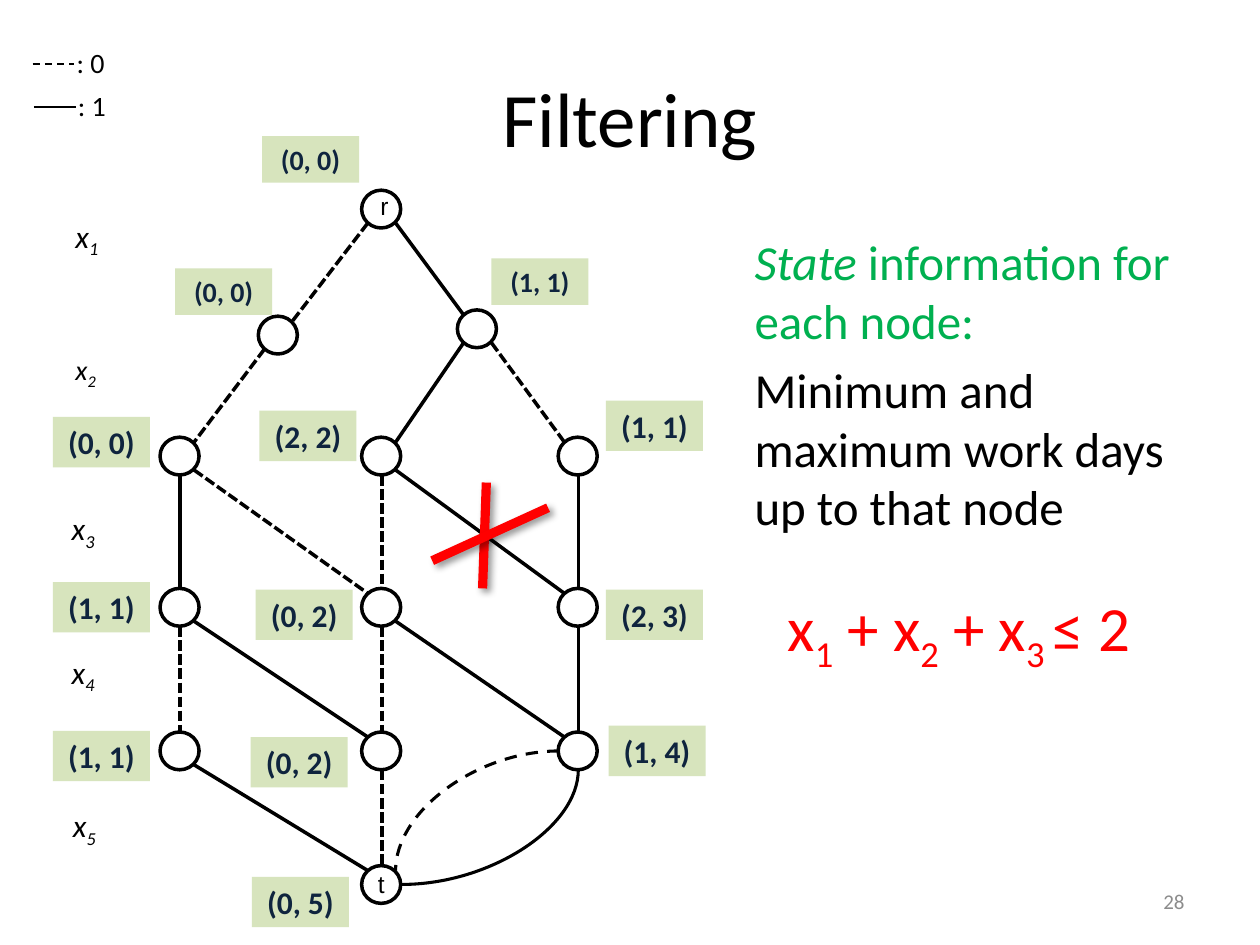
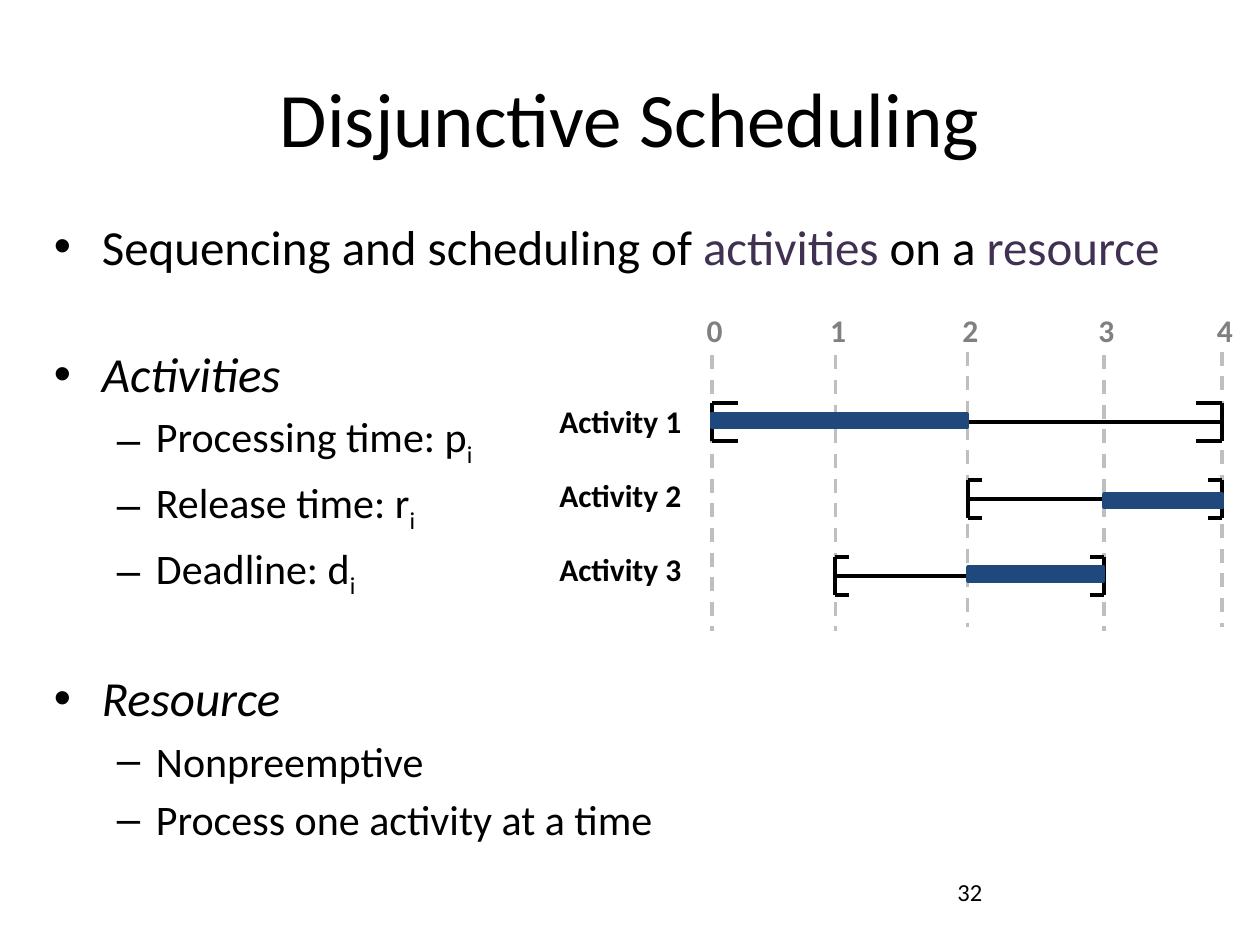
from lxml import etree
from pptx import Presentation, util as u
from pptx.dml.color import RGBColor
from pptx.enum import dml, shapes, text
from pptx.oxml import parse_xml
from pptx.oxml.ns import nsdecls, qn

BLACK, WHITE, RED, GREEN = "000000", "FFFFFF", "FF0000", "00B050"
NAVY, PURPLE, TAG_GREEN, TAG_TEXT = "1F497D", "403152", "D7E4BD", "0F243E"
TICK_GRAY, TICK_TEXT, NUMBER_GRAY = "BFBFBF", "808080", "8C8C8C"
SHORT_DASH, DASH = dml.MSO_LINE.SQUARE_DOT, dml.MSO_LINE.DASH
LEFT, CENTER, RIGHT = text.PP_ALIGN.LEFT, text.PP_ALIGN.CENTER, text.PP_ALIGN.RIGHT
TOP, MIDDLE = text.MSO_ANCHOR.TOP, text.MSO_ANCHOR.MIDDLE
color = RGBColor.from_string


def add_text(slide, box, paragraphs, size, hue=BLACK, bold=False, font="Calibri",
             align=LEFT, anchor=TOP, wrap=True, fill=None, space=0):
    """Each paragraph is a list of (text, style) runs; style may hold i, sub, hue."""
    box = [u.Inches(length) for length in box]
    if fill:
        shape = slide.shapes.add_shape(shapes.MSO_SHAPE.RECTANGLE, *box)
        shape.shadow.inherit = False
        shape.fill.solid()
        shape.fill.fore_color.rgb = color(fill)
        shape.line.fill.background()
    else:
        shape = slide.shapes.add_textbox(*box)
    frame = shape.text_frame
    frame.word_wrap, frame.vertical_anchor = wrap, anchor
    for index, runs in enumerate(paragraphs):
        paragraph = frame.add_paragraph() if index else frame.paragraphs[0]
        paragraph.alignment = align
        paragraph.space_before = u.Pt(space)
        for words, style in runs:
            run = paragraph.add_run()
            run.text = words
            run.font.name, run.font.size, run.font.bold = font, u.Pt(size), bold
            run.font.italic = "i" in style
            run.font.color.rgb = color(style.get("hue", hue))
            if "sub" in style:
                run._r.get_or_add_rPr().set("baseline", "-25000")
    return frame


def add_line(slide, start, end, width, hue=BLACK, dash=None, curved=False, shadow=False):
    kind = shapes.MSO_CONNECTOR.CURVE if curved else shapes.MSO_CONNECTOR.STRAIGHT
    line = slide.shapes.add_connector(kind, *[u.Inches(v) for v in (*start, *end)])
    line.line.width = u.Pt(width)
    line.line.color.rgb = color(hue)
    if dash:
        line.line.dash_style = dash
    properties = line._element.spPr
    if curved:  # a quarter turn that leaves the start horizontally
        properties.find(qn("a:prstGeom")).set("prst", "curvedConnector2")
    effects = etree.SubElement(properties, qn("a:effectLst"))
    if shadow:
        effects.append(parse_xml(
            f'<a:outerShdw {nsdecls("a")} blurRad="50800" dist="38100" dir="2700000">'
            '<a:srgbClr val="000000"><a:alpha val="40000"/></a:srgbClr></a:outerShdw>'))


presentation = Presentation()
presentation.slide_width, presentation.slide_height = u.Inches(10), u.Inches(7.5)

slides = []
for title in ("Filtering", "Disjunctive Scheduling"):
    slide = presentation.slides.add_slide(presentation.slide_layouts[6])
    add_text(slide, (0.5, 0.3, 9, 1.25), [[(title, {})]], 44, align=CENTER, anchor=MIDDLE)
    slides.append(slide)
filtering, scheduling = slides

# Filtering: decision diagram
COLUMNS = {"left": 1.43, "middle": 3.03, "right": 4.59}
nodes = {"r": (3.03, 1.66), "x2 zero": (2.21, 2.66), "x2 one": (3.79, 2.61), "t": (3.03, 7.02)}
for row, y in ((3, 3.62), (4, 4.82), (5, 5.96)):
    for column, x in COLUMNS.items():
        nodes[f"{column} {row}"] = (x, y)

zero_edges = [("r", "x2 zero"), ("x2 zero", "left 3"), ("x2 one", "right 3"),
              ("left 3", "middle 4"), ("middle 3", "middle 4"), ("left 4", "left 5"),
              ("middle 4", "middle 5"), ("middle 5", "t")]
one_edges = [("r", "x2 one"), ("x2 one", "middle 3"), ("left 3", "left 4"),
             ("middle 3", "right 4"), ("right 3", "right 4"), ("left 4", "middle 5"),
             ("middle 4", "right 5"), ("right 4", "right 5"), ("left 5", "t")]
for edges, dash in ((zero_edges, SHORT_DASH), (one_edges, None)):
    for upper, lower in edges:
        (x1, y1), (x2, y2) = nodes[upper], nodes[lower]
        side = (x2 > x1) - (x2 < x1)
        dx, dy = 0.11 * side, 0.11 if side else 0.15
        add_line(filtering, (x1 + dx, y1 + dy), (x2 - dx, y2 - dy), 2, dash=dash)

for x, y in nodes.values():
    node = filtering.shapes.add_shape(
        shapes.MSO_SHAPE.OVAL, u.Inches(x - 0.16), u.Inches(y - 0.15),
        u.Inches(0.31), u.Inches(0.3))
    node.shadow.inherit = False
    node.fill.solid()
    node.fill.fore_color.rgb = color(WHITE)
    node.line.color.rgb = color(BLACK)
    node.line.width = u.Pt(2)

add_line(filtering, (3.19, 7.02), (4.59, 6.11), 1.75, curved=True)
add_line(filtering, (4.44, 5.96), (3.14, 6.91), 1.75, dash=DASH, curved=True)

variables = [(0.5, 1.67, 18), (0.5, 2.75, 16), (0.47, 3.99, 18), (0.47, 5.13, 18), (0.48, 6.35, 18)]
for index, (x, y, size) in enumerate(variables, 1):
    add_text(filtering, (x, y, 0.52, 0.4),
             [[("x", {"i": 1}), (str(index), {"i": 1, "sub": 1})]], size)

add_text(filtering, (5.89, 1.79, 3.86, 3.18), [
    [("State", {"i": 1, "hue": GREEN}), (" information for each node:", {"hue": GREEN})],
    [("Minimum and maximum work days up to that node", {})]], 28, space=5.6)
constraint = add_text(filtering, (6.25, 4.67, 2.91, 0.61), [[
    ("x", {}), ("1", {"sub": 1}), (" + x", {}), ("2", {"sub": 1}),
    (" + x", {}), ("3 ", {"sub": 1}), ("≤ 2", {})]], 36, RED, wrap=False, space=7.2)
constraint.margin_left = constraint.margin_right = 0
constraint.margin_top = constraint.margin_bottom = 0

for start, end in (((3.86, 3.83), (3.83, 4.67)), ((4.35, 4.03), (3.43, 4.45))):
    add_line(filtering, start, end, 5.25, RED, shadow=True)

states = [
    (2.08, 1.08, "(0, 0)", 16), (1.39, 2.13, "(0, 0)", 16), (3.9, 2.05, "(1, 1)", 16),
    (0.42, 3.31, "(0, 0)", 18), (0.42, 4.62, "(1, 1)", 18), (0.42, 5.8, "(1, 1)", 18),
    (2.06, 3.26, "(2, 2)", 18), (2.03, 4.68, "(0, 2)", 18), (1.99, 5.85, "(0, 2)", 18),
    (4.81, 3.18, "(1, 1)", 18), (4.81, 4.68, "(2, 3)", 18), (4.83, 5.76, "(1, 4)", 18),
    (2, 6.96, "(0, 5)", 18)]
for x, y, state, size in states:
    add_text(filtering, (x, y, 0.77, 0.37 if size == 16 else 0.4), [[(state, {})]], size,
             TAG_TEXT, bold=True, align=CENTER, fill=TAG_GREEN)

for x, y, name in ((2.92, 1.47, "r"), (2.9, 6.85, "t")):
    add_text(filtering, (x, y, 0.44, 0.34), [[(name, {})]], 14, font="Arial")

for x, y, value, dash in ((0.26, 0.51, 0, DASH), (0.27, 0.85, 1, None)):
    add_line(filtering, (x, y), (x + 0.33, y), 1, dash=dash)
    add_text(filtering, (x + 0.25, y - 0.2, 0.43, 0.37), [[(f": {value}", {})]], 16, wrap=False)

add_text(filtering, (7.17, 6.95, 2.33, 0.4), [[("28", {})]], 12, NUMBER_GRAY,
         align=RIGHT, anchor=MIDDLE)

# Disjunctive Scheduling: outline, as (level, space before, runs)
outline = [
    (0, 5.6, [("Sequencing and scheduling of ", {}), ("activities", {"hue": PURPLE}),
              (" on a ", {}), ("resource", {"hue": PURPLE})]),
    (0, 39, [("Activities", {"i": 1})]),
    (1, 4.8, [("Processing time: p", {}), ("i", {"sub": 1})]),
    (1, 4.8, [("Release time: r", {}), ("i", {"sub": 1})]),
    (1, 4.8, [("Deadline: d", {}), ("i", {"sub": 1})]),
    (0, 39, [("Resource", {"i": 1})]),
    (1, 4.8, [("Nonpreemptive", {})]),
    (1, 4.8, [("Process one activity at a time", {})])]
LEVELS = [("•", 0.38, -0.38, 28), ("–", 0.81, -0.31, 24)]
body = add_text(scheduling, (0.33, 1.67, 9, 5.4), [runs for _, _, runs in outline], 28)
for paragraph, (level, space, _) in zip(body.paragraphs, outline):
    bullet, margin, indent, size = LEVELS[level]
    paragraph.level = level
    paragraph.space_before = u.Pt(space)
    for run in paragraph.runs:
        run.font.size = u.Pt(size)
    properties = paragraph._p.get_or_add_pPr()
    properties.set("marL", str(u.Inches(margin)))
    properties.set("indent", str(u.Inches(indent)))
    etree.SubElement(properties, qn("a:buFont")).set("typeface", "Arial")
    etree.SubElement(properties, qn("a:buChar")).set("char", bullet)

# Timeline
ticks = [5.65, 6.63, 7.68, 8.76, 9.7]
tick_tops = [2.82, 2.82, 2.79, 2.82, 2.79]
for time, (x, top) in enumerate(zip(ticks, tick_tops)):
    add_line(scheduling, (x, top), (x, top + 2.19), 2, TICK_GRAY, DASH)
    add_text(scheduling, (x - 0.14, 2.42, 0.33, 0.4), [[(str(time), {})]], 18, TICK_TEXT,
             bold=True, wrap=False)

# (release, deadline, start, end, bracket arm, bar top)
activities = [(0, 4, 0, 2, 0.21, 3.28), (2, 4, 3, 4, 0.11, 3.92), (1, 3, 2, 3, 0.11, 4.5)]
for index, (release, deadline, start, end, arm, bar_top) in enumerate(activities):
    add_text(scheduling, (4.34, 3.14 + 0.59 * index, 1.18, 0.4),
             [[(f"Activity {index + 1}", {})]], 18, bold=True, wrap=False)
    y = 3.35 + 0.61 * index
    add_line(scheduling, (ticks[release], y), (ticks[deadline], y), 2.25)
    for x, inward in ((ticks[release], arm), (ticks[deadline], -arm)):
        add_line(scheduling, (x, y - 0.15), (x, y + 0.15), 2.25)
        for edge in (y - 0.15, y + 0.15):
            add_line(scheduling, (x, edge), (x + inward, edge), 2.25)
    bar = scheduling.shapes.add_shape(
        shapes.MSO_SHAPE.RECTANGLE, u.Inches(ticks[start]), u.Inches(bar_top),
        u.Inches(ticks[end] - ticks[start]), u.Inches(0.11))
    bar.shadow.inherit = False
    bar.fill.solid()
    bar.fill.fore_color.rgb = color(NAVY)
    bar.line.color.rgb = color(NAVY)
    bar.line.width = u.Pt(2)

add_text(scheduling, (7.5, 6.83, 2.08, 0.5), [[("32", {})]], 14, anchor=MIDDLE)

presentation.save("out.pptx")
